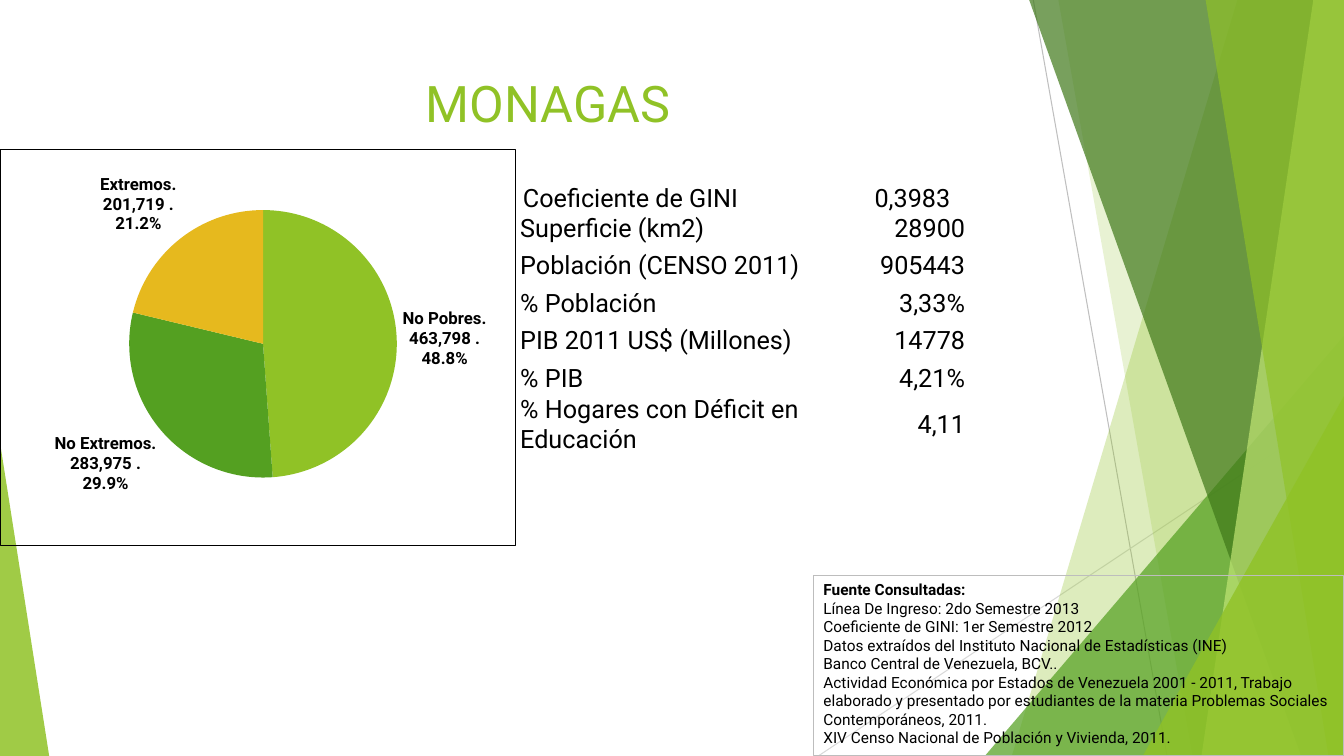
from lxml import etree
from pptx import Presentation
from pptx.chart.data import CategoryChartData
from pptx.dml.color import RGBColor
from pptx.enum.chart import XL_CHART_TYPE as ChartType, XL_LABEL_POSITION as LabelPos
from pptx.enum.shapes import MSO_CONNECTOR as Connector, MSO_SHAPE as Preset
from pptx.enum.text import MSO_ANCHOR as Anchor, PP_ALIGN as Align
from pptx.oxml import parse_xml
from pptx.oxml.ns import nsdecls, qn
from pptx.util import Cm, Pt

LIME = RGBColor(0x90, 0xC2, 0x26)
GREEN = RGBColor(0x54, 0xA0, 0x21)
FOREST = RGBColor(0x3F, 0x78, 0x19)
PALE_LIME = RGBColor(0xC0, 0xE4, 0x74)
GOLD = RGBColor(0xE6, 0xB9, 0x1E)
BLACK = RGBColor(0, 0, 0)
WHITE = RGBColor(0xFF, 0xFF, 0xFF)
GRAY = RGBColor(0xBF, 0xBF, 0xBF)
LIGHT_GRAY = RGBColor(0xD9, 0xD9, 0xD9)
FRAME_GRAY = RGBColor(0xBD, 0xBD, 0xBD)
FONT = "Roboto"
WIDTH, HEIGHT = 33.87, 19.05

INDICATORS = [
    ("Superficie (km2)", "28900"),
    ("Población (CENSO 2011)", "905443"),
    ("% Población", "3,33%"),
    ("PIB 2011 US$ (Millones)", "14778"),
    ("% PIB", "4,21%"),
    ("% Hogares con Déficit en Educación", "4,11"),
]
POVERTY = [
    ("No Pobres", 463798, LIME),
    ("No Extremos", 283975, GREEN),
    ("Extremos", 201719, GOLD),
]
SOURCES = [
    "Fuente Consultadas:",
    "Línea De Ingreso: 2do Semestre 2013",
    "Coeficiente de GINI: 1er Semestre 2012",
    "Datos extraídos del Instituto Nacional de Estadísticas (INE)",
    "Banco Central de Venezuela, BCV..",
    "Actividad Económica por Estados de Venezuela 2001 - 2011, Trabajo elaborado y "
    "presentado por estudiantes de la materia Problemas Sociales Contemporáneos, 2011.",
    "XIV Censo Nacional de Población y Vivienda, 2011.",
]


def box(*lengths):
    return [Cm(length) for length in lengths]


def style_font(font, size, color=BLACK, bold=False):
    font.name, font.size, font.bold = FONT, Pt(size), bold
    font.color.rgb = color


def add_run(paragraph, text, size, color=BLACK, bold=False):
    run = paragraph.add_run()
    run.text = text
    style_font(run.font, size, color, bold)


def paint(shape, color, opacity):
    shape.shadow.inherit = False
    shape.line.fill.background()
    shape.fill.solid()
    shape.fill.fore_color.rgb = color
    tint = shape.fill._xPr.find(".//" + qn("a:srgbClr"))
    etree.SubElement(tint, qn("a:alpha")).set("val", str(opacity * 1000))


def add_ray(slide, start, end, color):
    ray = slide.shapes.add_connector(Connector.STRAIGHT, *box(*start, *end))
    ray.line.color.rgb = color
    ray.line.width = Pt(0.75)
    etree.SubElement(ray.line._get_or_add_ln().getparent(), qn("a:effectLst"))


def add_band(slide, top_x, bottom_x, color, opacity):
    builder = slide.shapes.build_freeform(Cm(top_x), Cm(-0.02))
    corners = [(WIDTH, -0.02), (WIDTH, HEIGHT), (bottom_x, HEIGHT)]
    builder.add_line_segments([box(*corner) for corner in corners], close=True)
    paint(builder.convert_to_shape(), color, opacity)


def add_corner(slide, left, top, width, apex, color, opacity):
    corner = slide.shapes.add_shape(
        Preset.ISOSCELES_TRIANGLE, *box(left, top, width, HEIGHT - top))
    corner.adjustments[0] = apex
    paint(corner, color, opacity)


def add_backdrop(slide):
    add_ray(slide, (26.04, 0), (29.41, HEIGHT), GRAY)
    add_ray(slide, (WIDTH, 10.24), (20.62, HEIGHT), LIGHT_GRAY)
    add_band(slide, 31.19, 25.5, LIME, 30)
    add_band(slide, 26.67, 30.05, LIME, 20)
    add_corner(slide, 24.82, 8.46, 9.05, 1, GREEN, 72)
    add_band(slide, 25.93, 32.79, FOREST, 70)
    add_band(slide, 33.1, 30.28, PALE_LIME, 70)
    add_band(slide, 30.38, 33.48, LIME, 65)
    add_corner(slide, 28.8, 9.98, 5.07, 1, LIME, 80)
    add_corner(slide, 0, 11.15, 1.24, 0, LIME, 85)


def add_title(slide):
    title = slide.shapes.title
    title.left, title.top, title.width, title.height = box(1.88, 1.7, 23.88, 3.66)
    title.text_frame.vertical_anchor = Anchor.TOP
    heading = title.text_frame.paragraphs[0]
    heading.alignment = Align.CENTER
    add_run(heading, "MONAGAS", 36, LIME)


def add_gini(slide):
    gini = slide.shapes.add_textbox(*box(12.93, 4.47, 13.23, 1.02))
    gini.text_frame.word_wrap = True
    line = gini.text_frame.paragraphs[0]
    add_run(line, "Coeficiente de GINI\t0,3983", 18)
    stops = etree.SubElement(line._p.get_or_add_pPr(), qn("a:tabLst"))
    etree.SubElement(stops, qn("a:tab"), pos=str(Cm(8.86)), algn="l")


def add_poverty_pie(slide):
    data = CategoryChartData(number_format="#,##0 ")
    data.categories = [name for name, _, _ in POVERTY]
    data.add_series("Series 1", [people for _, people, _ in POVERTY])
    chart = slide.shapes.add_chart(ChartType.PIE, *box(0, 3.76, 13, 10.01), data).chart
    chart.has_legend = chart.has_title = False
    style_font(chart.font, 10)
    pie = chart.plots[0]
    pie.vary_by_categories = True
    for index, (_, _, color) in enumerate(POVERTY):
        wedge = pie.series[0].points[index].format
        wedge.fill.solid()
        wedge.fill.fore_color.rgb = color
        wedge.line.fill.background()

    labels = pie.series[0].data_labels
    labels.show_value = labels.show_percentage = labels.show_category_name = True
    labels.show_legend_key = False
    labels.number_format, labels.number_format_is_linked = "0.0%", False
    labels.position = LabelPos.OUTSIDE_END
    style_font(labels.font, 12, bold=True)
    separator = parse_xml(f'<c:separator {nsdecls("c")}>. </c:separator>')
    labels._element.find(qn("c:showBubbleSize")).addnext(separator)

    area = chart.element.find(qn("c:chart"))
    area.addnext(parse_xml(
        f'<c:spPr {nsdecls("c", "a")}><a:noFill/><a:ln w="{Pt(0.75)}"><a:solidFill>'
        f'<a:srgbClr val="{BLACK}"/></a:solidFill></a:ln></c:spPr>'))
    plot_area = area.find(qn("c:plotArea"))
    for layout in plot_area.findall(qn("c:layout")):
        plot_area.remove(layout)
    frame = "".join(f'<c:{side} val="{share}"/>' for side, share in
                    [("x", 0.25), ("y", 0.15), ("w", 0.52), ("h", 0.68)])
    plot_area.insert(0, parse_xml(
        f'<c:layout {nsdecls("c")}><c:manualLayout><c:layoutTarget val="inner"/>'
        f'<c:xMode val="edge"/><c:yMode val="edge"/>{frame}</c:manualLayout></c:layout>'))


def add_indicators(slide):
    table = slide.shapes.add_table(
        len(INDICATORS), 2, *box(13.08, 5.36, 11.28, 4.95)).table
    table.first_row = table.horz_banding = False
    table.columns[0].width, table.columns[1].width = box(7.16, 4.11)
    for index, indicator in enumerate(INDICATORS):
        table.rows[index].height = Cm(1.09 if index % 2 else 0.56)
        for column, text in enumerate(indicator):
            cell = table.cell(index, column)
            cell.fill.background()
            cell.vertical_anchor = Anchor.MIDDLE
            cell.margin_left = cell.margin_right = cell.margin_top = Cm(0.03)
            cell.margin_bottom = 0
            entry = cell.text_frame.paragraphs[0]
            entry.alignment = Align.RIGHT if column else Align.LEFT
            add_run(entry, text, 18)
            for order, side in enumerate("LRTB"):
                cell._tc.get_or_add_tcPr().insert(order, parse_xml(
                    f'<a:ln{side} {nsdecls("a")} w="{Pt(1)}"><a:solidFill>'
                    f'<a:srgbClr val="{WHITE}"/></a:solidFill></a:ln{side}>'))


def add_sources(slide):
    sources = slide.shapes.add_shape(Preset.RECTANGLE, *box(20.5, 14.5, 13.37, 4.55))
    sources.shadow.inherit = False
    sources.fill.background()
    sources.line.color.rgb = FRAME_GRAY
    sources.line.width = Pt(0.75)
    frame = sources.text_frame
    frame.word_wrap = True
    frame.vertical_anchor = Anchor.TOP
    for index, text in enumerate(SOURCES):
        source = frame.add_paragraph() if index else frame.paragraphs[0]
        source.alignment = Align.LEFT
        add_run(source, text, 11, bold=index == 0)


def main():
    deck = Presentation()
    deck.slide_width, deck.slide_height = box(WIDTH, HEIGHT)
    slide = deck.slides.add_slide(deck.slide_layouts[5])
    add_backdrop(slide)
    add_title(slide)
    add_gini(slide)
    add_poverty_pie(slide)
    add_indicators(slide)
    add_sources(slide)
    deck.save("out.pptx")


if __name__ == "__main__":
    main()
